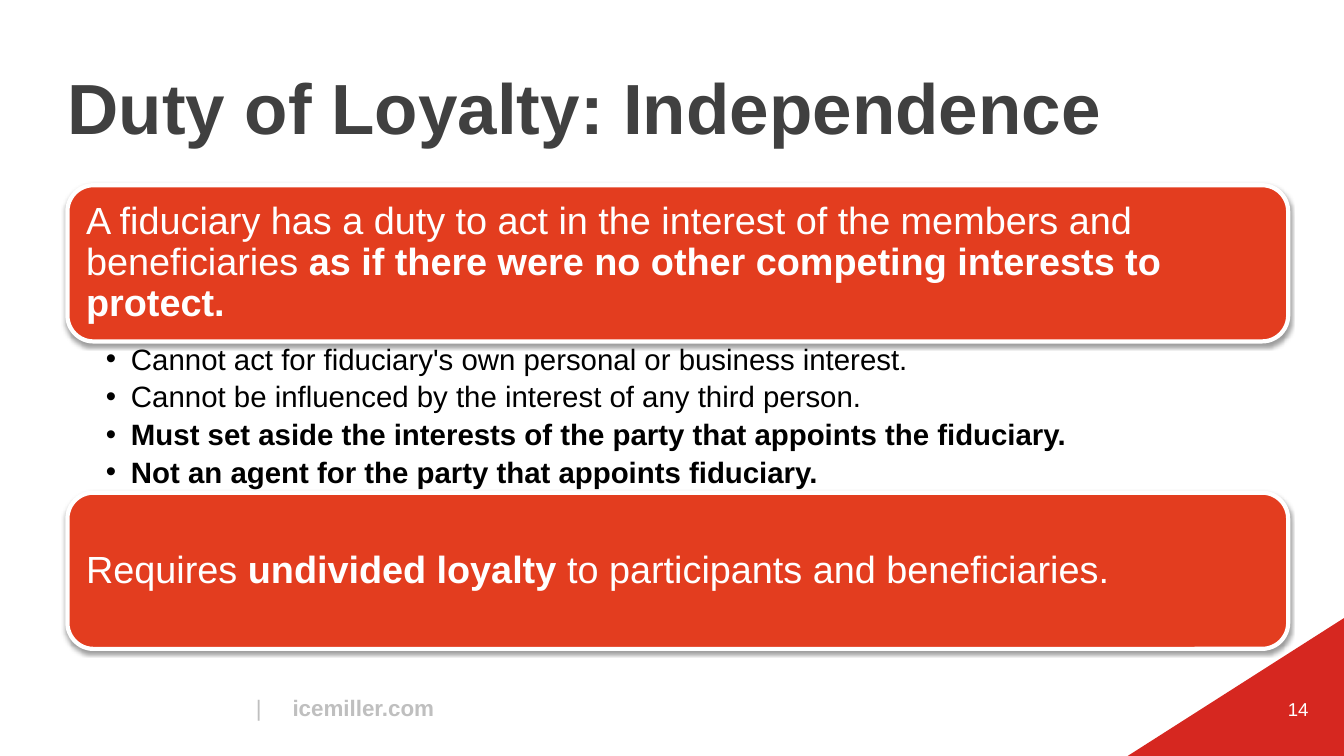
import dataclasses

import pptx
import pptx.dml.color
import pptx.enum.shapes
import pptx.enum.text
import pptx.oxml
import pptx.oxml.ns
import pptx.util

Pt = pptx.util.Pt
Align = pptx.enum.text.PP_ALIGN
Anchor = pptx.enum.text.MSO_ANCHOR


@dataclasses.dataclass(frozen=True)
class Theme:
    """Colours, typeface and type sizes of the slide."""
    font: str = "Arial"
    card: str = "E33D1F"
    corner: str = "D62720"
    white: str = "FFFFFF"
    heading: str = "404040"
    body: str = "000000"
    footer: str = "BFBFBF"
    heading_size: float = 50.7
    card_size: float = 27
    point_size: float = 21
    footer_size: float = 16
    number_size: float = 13.3


THEME = Theme()
LEFT, WIDTH = 48.2, 872
CARD_HEIGHT, POINTS_HEIGHT = 111.6, 108
FIRST_CARD_TOP = 132.3
POINTS_TOP = FIRST_CARD_TOP + CARD_HEIGHT
SECOND_CARD_TOP = POINTS_TOP + POINTS_HEIGHT


def rgb(value):
    """Return a colour from its hex value."""
    return pptx.dml.color.RGBColor.from_string(value)


def apply(target, values):
    """Set each named attribute on the target."""
    for name, value in values.items():
        setattr(target, name, value)


def set_frame(frame, insets, anchor=Anchor.TOP, wrap=True):
    """Set insets (left, top, right, bottom), anchor and wrapping."""
    sides = ("margin_left", "margin_top", "margin_right", "margin_bottom")
    apply(frame, {side: Pt(inset) for side, inset in zip(sides, insets)})
    apply(frame, {"vertical_anchor": anchor, "word_wrap": wrap})


def add_runs(paragraph, runs, size, color, layout):
    """Fill a paragraph with (text, bold) runs."""
    apply(paragraph, layout)
    for text, bold in runs:
        run = paragraph.add_run()
        run.text = text
        apply(run.font, {"name": THEME.font, "size": Pt(size), "bold": bold})
        run.font.color.rgb = rgb(color)


def add_text(slide, box, runs, size, color, insets=(0, 0, 0, 0),
             anchor=Anchor.TOP, wrap=True, **layout):
    """Add a one-paragraph text box and return its paragraph."""
    frame = slide.shapes.add_textbox(*map(Pt, box)).text_frame
    set_frame(frame, insets, anchor, wrap)
    add_runs(frame.paragraphs[0], runs, size, color, layout)
    return frame.paragraphs[0]


def add_paragraph_xml(paragraph, body):
    """Append an element to the paragraph properties."""
    namespace = pptx.oxml.ns.nsdecls("a")
    element = pptx.oxml.parse_xml(body.replace(" NS", " " + namespace))
    paragraph._p.get_or_add_pPr().append(element)


def add_card(slide, top, runs):
    """Add a rounded card with a white border and a soft shadow."""
    card = slide.shapes.add_shape(
        pptx.enum.shapes.MSO_SHAPE.ROUNDED_RECTANGLE,
        Pt(LEFT), Pt(top), Pt(WIDTH), Pt(CARD_HEIGHT))
    card.shadow.inherit = False
    card.fill.solid()
    card.fill.fore_color.rgb = rgb(THEME.card)
    card.line.color.rgb = rgb(THEME.white)
    card.line.width = Pt(3)
    effects = card._element.spPr.find(pptx.oxml.ns.qn("a:effectLst"))
    effects.append(pptx.oxml.parse_xml(
        f'<a:outerShdw {pptx.oxml.ns.nsdecls("a")} blurRad="{Pt(3.1)}" '
        f'dist="{Pt(1.6)}" dir="5400000" rotWithShape="0">'
        '<a:srgbClr val="000000"><a:alpha val="38000"/></a:srgbClr>'
        '</a:outerShdw>'))
    set_frame(card.text_frame, (7.9, 7.9, 7.9, 7.9), Anchor.MIDDLE)
    add_runs(card.text_frame.paragraphs[0], runs, THEME.card_size,
             THEME.white, {"alignment": Align.LEFT, "line_spacing": 0.9})


def add_points(slide, points):
    """Add the bulleted (text, bold) points between the cards."""
    box = slide.shapes.add_textbox(
        Pt(LEFT), Pt(POINTS_TOP), Pt(WIDTH), Pt(POINTS_HEIGHT))
    set_frame(box.text_frame, (27.4, 2.4, 15.1, 2.4))
    for index, point in enumerate(points):
        paragraph = (box.text_frame.add_paragraph() if index
                     else box.text_frame.paragraphs[0])
        properties = paragraph._p.get_or_add_pPr()
        properties.set("marL", str(Pt(18)))
        properties.set("indent", str(-Pt(18)))
        add_paragraph_xml(paragraph, f'<a:buFont NS typeface="{THEME.font}"/>')
        add_paragraph_xml(paragraph, '<a:buChar NS char="•"/>')
        paragraph.font.size = Pt(THEME.point_size)
        add_runs(paragraph, [point], THEME.point_size, THEME.body,
                 {"line_spacing": 0.9, "space_after": Pt(4.2)})


def add_corner(slide):
    """Add the red triangle in the lower right corner."""
    builder = slide.shapes.build_freeform(Pt(805.5), Pt(540))
    builder.add_line_segments([(Pt(960), Pt(441.5)), (Pt(960), Pt(540))])
    corner = builder.convert_to_shape()
    corner.shadow.inherit = False
    corner.fill.solid()
    corner.fill.fore_color.rgb = rgb(THEME.corner)
    corner.line.fill.background()


def add_footer(slide):
    """Add the web address and the page number."""
    address = add_text(
        slide, (175.7, 492.3, 145, 26.6), [("|", False), ("\ticemiller.com", True)],
        THEME.footer_size, THEME.footer, (7.2, 3.6, 7.2, 3.6), wrap=False)
    add_paragraph_xml(
        address, f'<a:tabLst NS><a:tab pos="{Pt(26.2)}" algn="l"/></a:tabLst>')
    add_text(slide, (887.8, 491.8, 54, 28.8), [("14", False)],
             THEME.number_size, THEME.white, (7.2, 3.6, 7.2, 3.6),
             Anchor.MIDDLE, alignment=Align.RIGHT)


def main():
    """Build the slide and save it."""
    deck = pptx.Presentation()
    apply(deck, {"slide_width": Pt(960), "slide_height": Pt(540)})
    slide = deck.slides.add_slide(deck.slide_layouts[6])
    add_corner(slide)
    add_footer(slide)
    add_text(slide, (LEFT, 41.3, 864, 64.8),
             [("Duty of Loyalty: Independence", True)], THEME.heading_size,
             THEME.heading, anchor=Anchor.BOTTOM, line_spacing=Pt(45.3))
    add_card(slide, FIRST_CARD_TOP, [
        ("A fiduciary has a duty to act in the interest of the members and "
         "beneficiaries ", False),
        ("as if there were no other competing interests to protect.", True)])
    add_points(slide, [
        ("Cannot act for fiduciary's own personal or business interest.", False),
        ("Cannot be influenced by the interest of any third person.", False),
        ("Must set aside the interests of the party that appoints the "
         "fiduciary.", True),
        ("Not an agent for the party that appoints fiduciary.", True)])
    add_card(slide, SECOND_CARD_TOP, [
        ("Requires ", False), ("undivided loyalty ", True),
        ("to participants and beneficiaries.", False)])
    deck.save("out.pptx")


if __name__ == "__main__":
    main()
